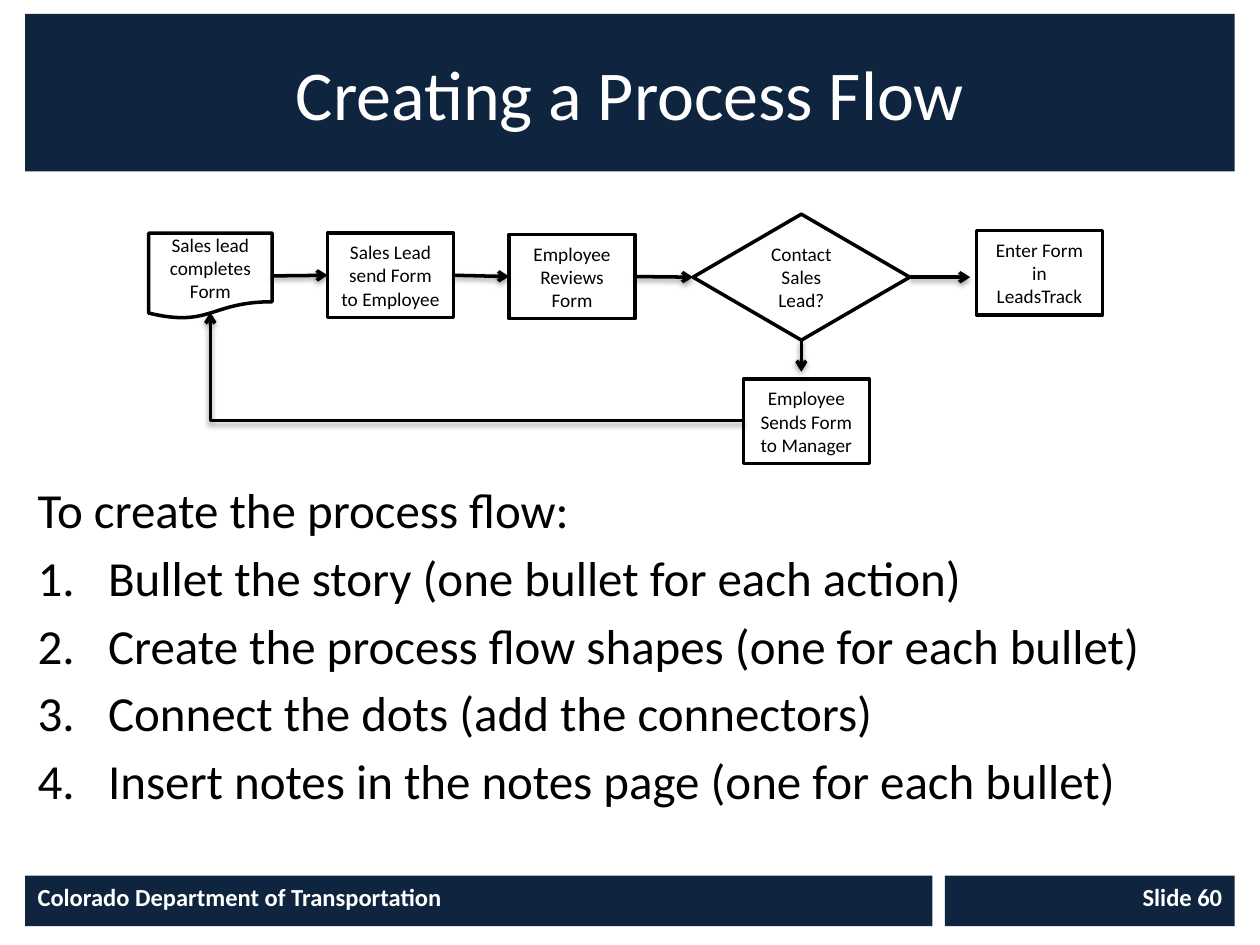
from lxml.etree import SubElement
from pptx import Presentation
from pptx.dml.color import RGBColor
from pptx.enum.shapes import MSO_CONNECTOR, MSO_SHAPE
from pptx.enum.text import MSO_ANCHOR, PP_ALIGN
from pptx.oxml.ns import qn
from pptx.util import Inches, Pt

COLORS = {"navy": "0F243E", "white": "FFFFFF", "black": "000000"}
FONT = "Calibri"
TOP, LEFT, BOTTOM, RIGHT = range(4)
MARGIN = 0.2
CONTENT_WIDTH = 9.6

STEPS = {
    "complete": (MSO_SHAPE.FLOWCHART_DOCUMENT, (0, 0.15, 0.98, 0.68), "Sales lead completes Form"),
    "send": (MSO_SHAPE.FLOWCHART_PROCESS, (1.42, 0.15, 1, 0.67), "Sales Lead send Form to Employee"),
    "review": (MSO_SHAPE.FLOWCHART_PROCESS, (2.86, 0.16, 1, 0.67), "Employee Reviews Form"),
    "decide": (MSO_SHAPE.FLOWCHART_DECISION, (4.32, 0, 1.72, 1), "Contact Sales Lead?"),
    "enter": (MSO_SHAPE.FLOWCHART_PROCESS, (6.57, 0.13, 1, 0.67), "Enter Form in LeadsTrack"),
    "manager": (MSO_SHAPE.FLOWCHART_PROCESS, (4.72, 1.31, 1, 0.67), "Employee Sends Form to Manager"),
}
INSTRUCTIONS = [
    "Bullet the story (one bullet for each action)",
    "Create the process flow shapes (one for each bullet)",
    "Connect the dots (add the connectors)",
    "Insert notes in the notes page (one for each bullet)",
]


def color(name):
    return RGBColor.from_string(COLORS[name])


def style_paragraph(paragraph, size, color_name, alignment=PP_ALIGN.LEFT, bold=False):
    paragraph.alignment = alignment
    paragraph.font.name = FONT
    paragraph.font.size = Pt(size)
    paragraph.font.bold = bold
    paragraph.font.color.rgb = color(color_name)


def add_box(slide, kind, box, text, fill, size, text_color, alignment, anchor, bold=False):
    shape = slide.shapes.add_shape(kind, *map(Inches, box))
    shape.shadow.inherit = False
    shape.fill.solid()
    shape.fill.fore_color.rgb = color(fill)
    shape.line.fill.background()
    frame = shape.text_frame
    frame.word_wrap = True
    frame.vertical_anchor = anchor
    paragraph = frame.paragraphs[0]
    paragraph.text = text
    style_paragraph(paragraph, size, text_color, alignment, bold)
    return shape


def add_title(slide, box):
    add_box(slide, MSO_SHAPE.RECTANGLE, box, "Creating a Process Flow", "navy", 40, "white",
            PP_ALIGN.CENTER, MSO_ANCHOR.MIDDLE)


def add_footer(slide, box):
    left, top, width, height = box
    gap, number_width = 0.1, 2.3
    name_width = width - gap - number_width
    for part_left, part_width, text, alignment in [
        (left, name_width, "Colorado Department of Transportation", PP_ALIGN.LEFT),
        (left + name_width + gap, number_width, "Slide 60", PP_ALIGN.RIGHT),
    ]:
        add_box(slide, MSO_SHAPE.RECTANGLE, (part_left, top, part_width, height), text,
                "navy", 14, "white", alignment, MSO_ANCHOR.TOP, True)


def add_arrow(slide, start, end, kind=MSO_CONNECTOR.STRAIGHT):
    connector = slide.shapes.add_connector(kind, *map(Inches, start + end))
    connector.line.color.rgb = color("black")
    connector.line.width = Pt(2)
    properties = connector._element.spPr
    SubElement(connector.line._get_or_add_ln(), qn("a:tailEnd"), type="arrow")
    effects = SubElement(properties, qn("a:effectLst"))
    shadow = SubElement(effects, qn("a:outerShdw"), blurRad=str(Pt(3.1)), dist=str(Pt(1.6)),
                        dir="5400000", rotWithShape="0")
    shadow_color = SubElement(shadow, qn("a:srgbClr"), val=COLORS["black"])
    SubElement(shadow_color, qn("a:alpha"), val="38000")
    return connector


def add_process_flow(slide, box):
    left, top, width, height = box
    shapes = {}
    for name, (kind, (x, y, step_width, step_height), text) in STEPS.items():
        shape = add_box(slide, kind, (left + x, top + y, step_width, step_height), text,
                        "white", 11, "black", PP_ALIGN.CENTER, MSO_ANCHOR.MIDDLE)
        shape.line.color.rgb = color("black")
        shape.line.width = Pt(2)
        shapes[name] = shape

    for source, target in [("complete", "send"), ("send", "review"), ("review", "decide")]:
        arrow = add_arrow(slide, (left, top), (left + width, top))
        arrow.begin_connect(shapes[source], RIGHT)
        arrow.end_connect(shapes[target], LEFT)

    for side, end in [(RIGHT, (6.52, 0.5)), (BOTTOM, (5.18, 1.25))]:
        arrow = add_arrow(slide, (left, top), (left + end[0], top + end[1]))
        arrow.begin_connect(shapes["decide"], side)

    return_arrow = add_arrow(slide, (left + 4.72, top + 1.64), (left + 0.49, top + 0.78),
                             MSO_CONNECTOR.ELBOW)
    return_arrow._element.spPr.find(qn("a:prstGeom")).set("prst", "bentConnector2")


def add_instructions(slide, box):
    frame = slide.shapes.add_textbox(*map(Inches, box)).text_frame
    frame.word_wrap = True
    frame.paragraphs[0].text = "To create the process flow:"
    for instruction in INSTRUCTIONS:
        paragraph = frame.add_paragraph()
        paragraph.text = instruction
        properties = paragraph._p.get_or_add_pPr()
        properties.set("marL", str(Inches(0.56)))
        properties.set("indent", str(Inches(-0.56)))
        SubElement(properties, qn("a:buFont"), typeface="+mj-lt")
        SubElement(properties, qn("a:buAutoNum"), type="arabicPeriod")
    for paragraph in frame.paragraphs:
        style_paragraph(paragraph, 28, "black")
        paragraph.space_before = Pt(5)


def main():
    presentation = Presentation()
    presentation.slide_width = Inches(10)
    presentation.slide_height = Inches(7.5)
    slide = presentation.slides.add_slide(presentation.slide_layouts[6])
    add_footer(slide, (MARGIN, 6.95, CONTENT_WIDTH, 0.4))
    add_title(slide, (MARGIN, 0.11, CONTENT_WIDTH, 1.25))
    add_process_flow(slide, (1.18, 1.7, 7.57, 1.98))
    add_instructions(slide, (MARGIN, 3.76, CONTENT_WIDTH, 3.14))
    presentation.save("out.pptx")


if __name__ == "__main__":
    main()
